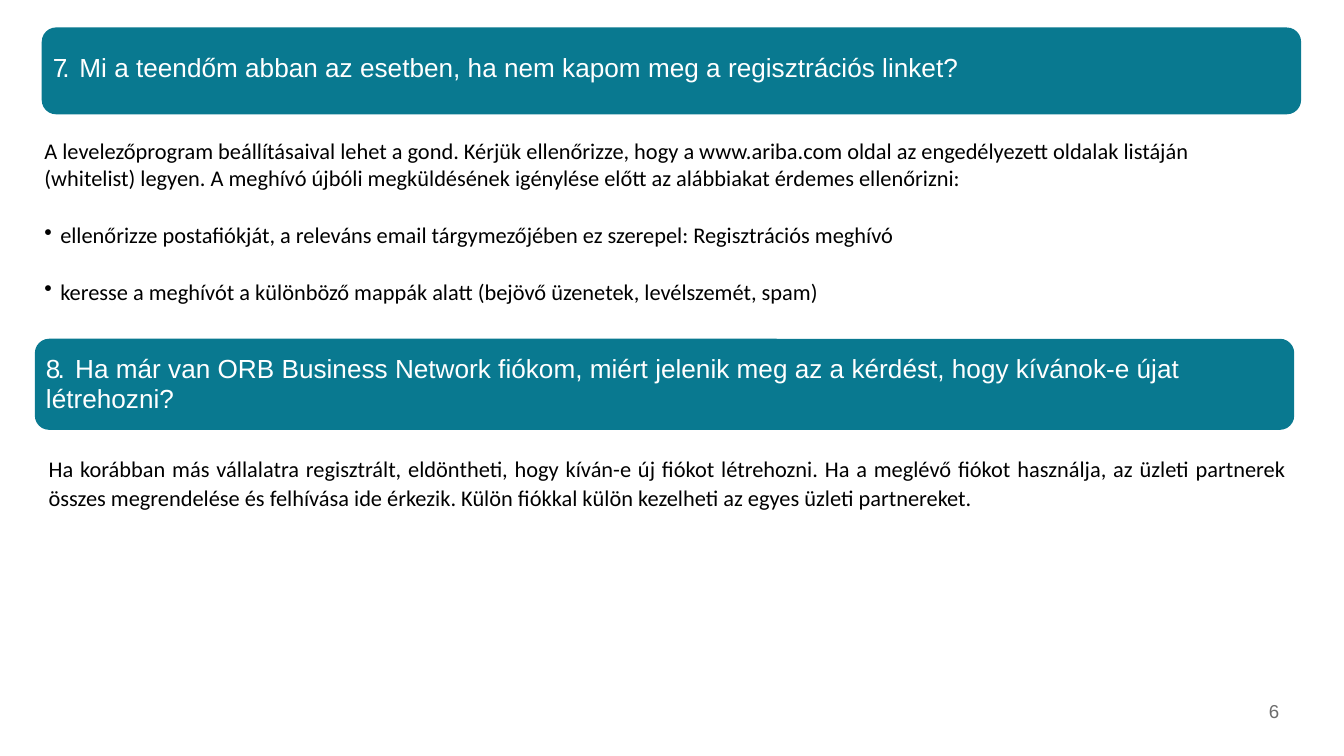
from lxml import etree
from pptx import Presentation
from pptx import util as u
from pptx.dml.color import RGBColor
from pptx.enum import shapes, text
from pptx.oxml import ns

TEAL = RGBColor(0x09, 0x79, 0x90)
WHITE = RGBColor(0xFF, 0xFF, 0xFF)
BLACK = RGBColor(0, 0, 0)
GREY = RGBColor(0x6D, 0x6D, 0x6D)
LEFT = text.PP_ALIGN.LEFT
JUST = text.PP_ALIGN.JUSTIFY


class Deck:
    def __init__(self, wide, high):
        self.file = Presentation()
        self.file.slide_width = u.Cm(wide)
        self.file.slide_height = u.Cm(high)
        self.slide = self.file.slides.add_slide(self.file.slide_layouts[6])

    def band(self, x, y, w, h):
        band = self.slide.shapes.add_shape(
            shapes.MSO_SHAPE.ROUNDED_RECTANGLE, u.Cm(x), u.Cm(y), u.Cm(w), u.Cm(h))
        band.shadow.inherit = False
        band.adjustments[0] = 0.27 / h
        band.fill.solid()
        band.fill.fore_color.rgb = TEAL
        band.line.fill.background()

    def box(self, x, y, w, h, top=0.06):
        frame = self.slide.shapes.add_textbox(
            u.Cm(x), u.Cm(y), u.Cm(w), u.Cm(h)).text_frame
        frame.word_wrap = True
        frame.margin_left = frame.margin_right = frame.margin_bottom = 0
        frame.margin_top = u.Cm(top)
        return frame

    def para(self, frame, runs, size, face, ink, first=True, lead=None,
             align=LEFT, bullet=False):
        para = frame.paragraphs[0] if first else frame.add_paragraph()
        props = para._p.get_or_add_pPr()
        props.set("marL", str(u.Cm(0.33 if bullet else 0.03)))
        if bullet:
            props.set("indent", str(u.Cm(-0.3)))
            etree.SubElement(props, ns.qn("a:buChar")).set("char", "•")
        para.alignment = align
        if lead:
            para.line_spacing = lead
        if not first:
            para.space_before = u.Pt(16)
        for words, gap in runs:
            run = para.add_run()
            run.text = words
            run.font.size = u.Pt(size)
            run.font.name = face
            run.font.color.rgb = ink
            if gap:
                run.font._element.set("spc", str(round(gap * 100)))

    def head(self, frame, mark, tight, gap, words, lead=None):
        runs = [(mark, tight), (" ", gap), (words, 0)]
        self.para(frame, runs, 14, "Arial", WHITE, lead=lead)

    def body(self, frame, words, **style):
        self.para(frame, [(words, 0)], 12, "Calibri", BLACK, **style)


def main():
    deck = Deck(25.4, 14.28)

    deck.band(0.79, 0.52, 23.8, 1.64)
    deck.head(deck.box(0.97, 0.79, 23.22, 0.76, 0.19), "7.", -2.7, 1.3,
              "Mi a teendőm abban az esetben, ha nem kapom meg a regisztrációs linket?")

    deck.band(0.66, 6.4, 23.8, 1.72)
    deck.head(deck.box(0.84, 6.63, 23.42, 1.17), "8.", -1.6, 1.6,
              "Ha már van ORB Business Network fiókom, miért jelenik meg az a kérdést, "
              "hogy kívánok-e újat létrehozni?", u.Pt(16))

    page = deck.box(23.95, 13.26, 0.28, 0.43, 0)
    deck.para(page, [("6", 0.1)], 10, "Arial", GREY, lead=u.Pt(10.9))

    deck.body(deck.box(0.89, 8.51, 23.44, 1.12),
              "Ha korábban más vállalatra regisztrált, eldöntheti, hogy kíván-e új fiókot "
              "létrehozni. Ha a meglévő fiókot használja, az üzleti partnerek összes "
              "megrendelése és felhívása ide érkezik. Külön fiókkal külön kezelheti az "
              "egyes üzleti partnereket.", lead=1.07, align=JUST)

    steps = deck.box(0.81, 2.54, 23.22, 3.25)
    deck.body(steps,
              "A levelezőprogram beállításaival lehet a gond. Kérjük ellenőrizze, hogy a "
              "www.ariba.com oldal az engedélyezett oldalak listáján (whitelist) legyen. "
              "A meghívó újbóli megküldésének igénylése előtt az alábbiakat érdemes "
              "ellenőrizni:")
    for words in (
        "ellenőrizze postafiókját, a releváns email tárgymezőjében ez szerepel: "
        "Regisztrációs meghívó",
        "keresse a meghívót a különböző mappák alatt (bejövő üzenetek, levélszemét, spam)",
    ):
        deck.body(steps, words, first=False, bullet=True)

    deck.file.save("out.pptx")


if __name__ == "__main__":
    main()
